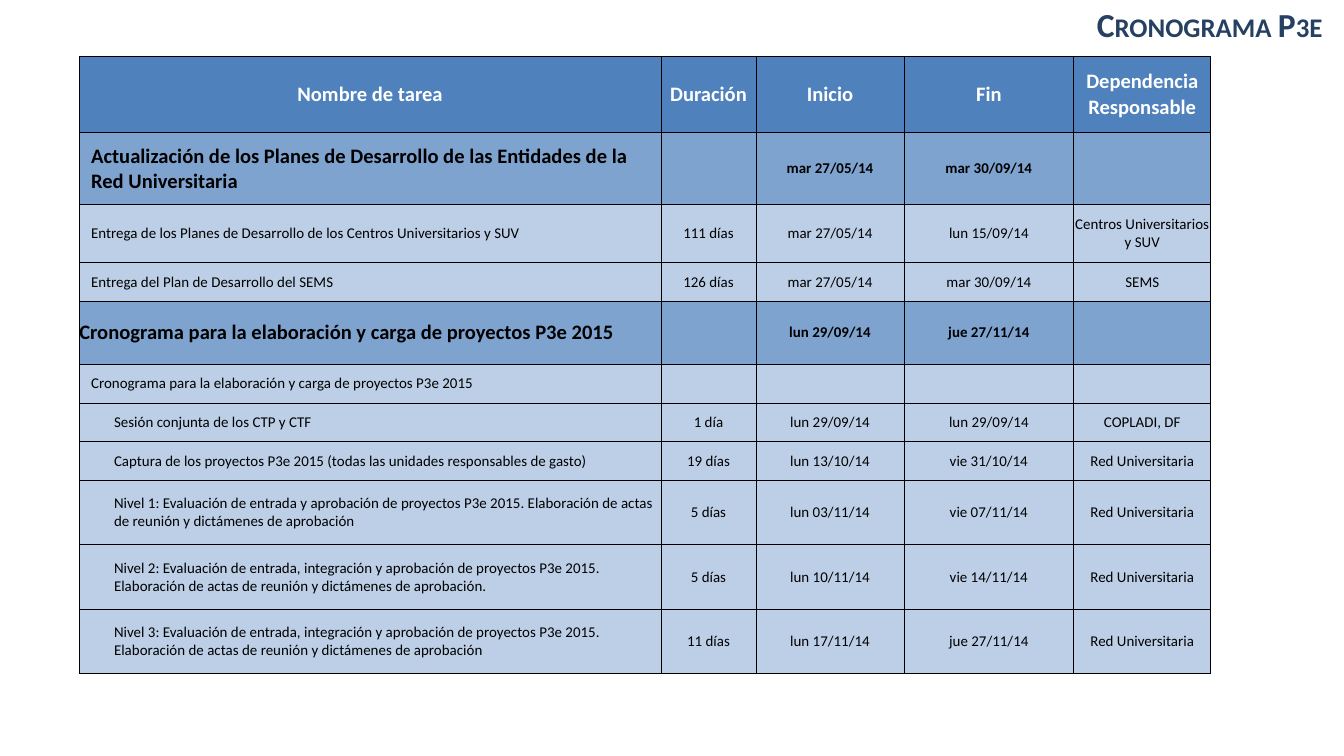
from lxml.etree import SubElement
from pptx import Presentation
from pptx.dml.color import RGBColor
from pptx.enum.text import MSO_ANCHOR, MSO_AUTO_SIZE, PP_ALIGN
from pptx.oxml.ns import qn
from pptx.util import Pt

FONT = "Calibri"
COLS = [311.6, 51, 79.2, 91, 73.4]
FILLS = {"head": "4F81BD", "group": "7FA3CF", "task": "BCCFE6"}
PLAN = "Cronograma para la elaboración y carga de proyectos P3e 2015"
RED = "Red Universitaria"

ROWS = [
    ("head", 41, 0, ["Nombre de tarea", "Duración", "Inicio", "Fin",
                     "Dependencia Responsable"]),
    ("group", 38.5, 6.3, ["Actualización de los Planes de Desarrollo de las Entidades de la Red Universitaria",
                          "", "mar 27/05/14", "mar 30/09/14", ""]),
    ("task", 31, 6.3, ["Entrega de los Planes de Desarrollo de los Centros Universitarios y SUV",
                       "111 días", "mar 27/05/14", "lun 15/09/14",
                       "Centros Universitarios y SUV"]),
    ("task", 20.75, 6.3, ["Entrega del Plan de Desarrollo del SEMS",
                          "126 días", "mar 27/05/14", "mar 30/09/14", "SEMS"]),
    ("group", 33.75, 0, [PLAN, "", "lun 29/09/14", "jue 27/11/14", ""]),
    ("task", 20.75, 6.3, [PLAN, "", "", "", ""]),
    ("task", 20.75, 18.6, ["Sesión conjunta de los CTP y CTF",
                           "1 día", "lun 29/09/14", "lun 29/09/14", "COPLADI, DF"]),
    ("task", 20.75, 18.6, ["Captura de los proyectos P3e 2015 (todas las unidades responsables de gasto)",
                           "19 días", "lun 13/10/14", "vie 31/10/14", RED]),
    ("task", 34.5, 18.6, ["Nivel 1: Evaluación de entrada y aprobación de proyectos P3e 2015. "
                          "Elaboración de actas de reunión y dictámenes de aprobación",
                          "5 días", "lun 03/11/14", "vie 07/11/14", RED]),
    ("task", 34.5, 18.6, ["Nivel 2: Evaluación de entrada, integración y aprobación de proyectos P3e 2015. "
                          "Elaboración de actas de reunión y dictámenes de aprobación.",
                          "5 días", "lun 10/11/14", "vie 14/11/14", RED]),
    ("task", 34.5, 18.6, ["Nivel 3: Evaluación de entrada, integración y aprobación de proyectos P3e 2015. "
                          "Elaboración de actas de reunión y dictámenes de aprobación",
                          "11 días", "lun 17/11/14", "jue 27/11/14", RED]),
]


def color(code):
    return RGBColor.from_string(code)


def style(font, size, code, bold):
    font.name = FONT
    font.size = Pt(size)
    font.bold = bold
    font.color.rgb = color(code)


def border(cell):
    props = cell._tc.get_or_add_tcPr()
    for side in ("lnL", "lnR", "lnT", "lnB"):
        line = SubElement(props, qn(f"a:{side}"), w=str(Pt(0.5)))
        fill = SubElement(line, qn("a:solidFill"))
        SubElement(fill, qn("a:srgbClr"), val="000000")


def fill_cell(cell, text, kind, first, indent):
    border(cell)
    cell.fill.solid()
    cell.fill.fore_color.rgb = color(FILLS[kind])
    cell.vertical_anchor = MSO_ANCHOR.MIDDLE
    cell.margin_left = Pt(indent if first else 0)
    cell.margin_right = cell.margin_top = cell.margin_bottom = 0
    para = cell.text_frame.paragraphs[0]
    para.text = text
    left = first and kind != "head"
    para.alignment = PP_ALIGN.LEFT if left else PP_ALIGN.CENTER
    large = kind == "head" or (kind == "group" and first)
    size = 11 if large else 8
    for run in para.runs:
        style(run.font, size, "FFFFFF" if kind == "head" else "000000", kind != "task")
    if not text:
        para._p.get_or_add_endParaRPr().set("sz", str(size * 100))


def add_plan(slide, left, top):
    width, height = sum(COLS), sum(row[1] for row in ROWS)
    table = slide.shapes.add_table(len(ROWS), len(COLS), Pt(left), Pt(top),
                                   Pt(width), Pt(height)).table
    table.horz_banding = False
    for col, size in zip(table.columns, COLS):
        col.width = Pt(size)
    for row, (kind, tall, indent, texts) in zip(table.rows, ROWS):
        row.height = Pt(tall)
        for index, (cell, text) in enumerate(zip(row.cells, texts)):
            fill_cell(cell, text, kind, index == 0, indent)


def add_title(slide, left, top, width, height):
    title = slide.shapes.title
    title.left, title.top = Pt(left), Pt(top)
    title.width, title.height = Pt(width), Pt(height)
    frame = title.text_frame
    frame.text = "Cronograma P3e"
    frame.word_wrap = False
    frame.auto_size = MSO_AUTO_SIZE.SHAPE_TO_FIT_TEXT
    frame.vertical_anchor = MSO_ANCHOR.TOP
    para = frame.paragraphs[0]
    para.alignment = PP_ALIGN.RIGHT
    para.line_spacing = 0.9
    para.space_before = Pt(0)
    font = para.runs[0].font
    style(font, 18, "254061", True)
    font._element.set("cap", "small")


def main():
    deck = Presentation()
    deck.slide_width, deck.slide_height = Pt(720), Pt(405)
    slide = deck.slides.add_slide(deck.slide_layouts[5])
    add_plan(slide, 42.5, 30.2)
    add_title(slide, 576, 0.7, 139.7, 26.6)
    deck.save("out.pptx")


if __name__ == "__main__":
    main()
